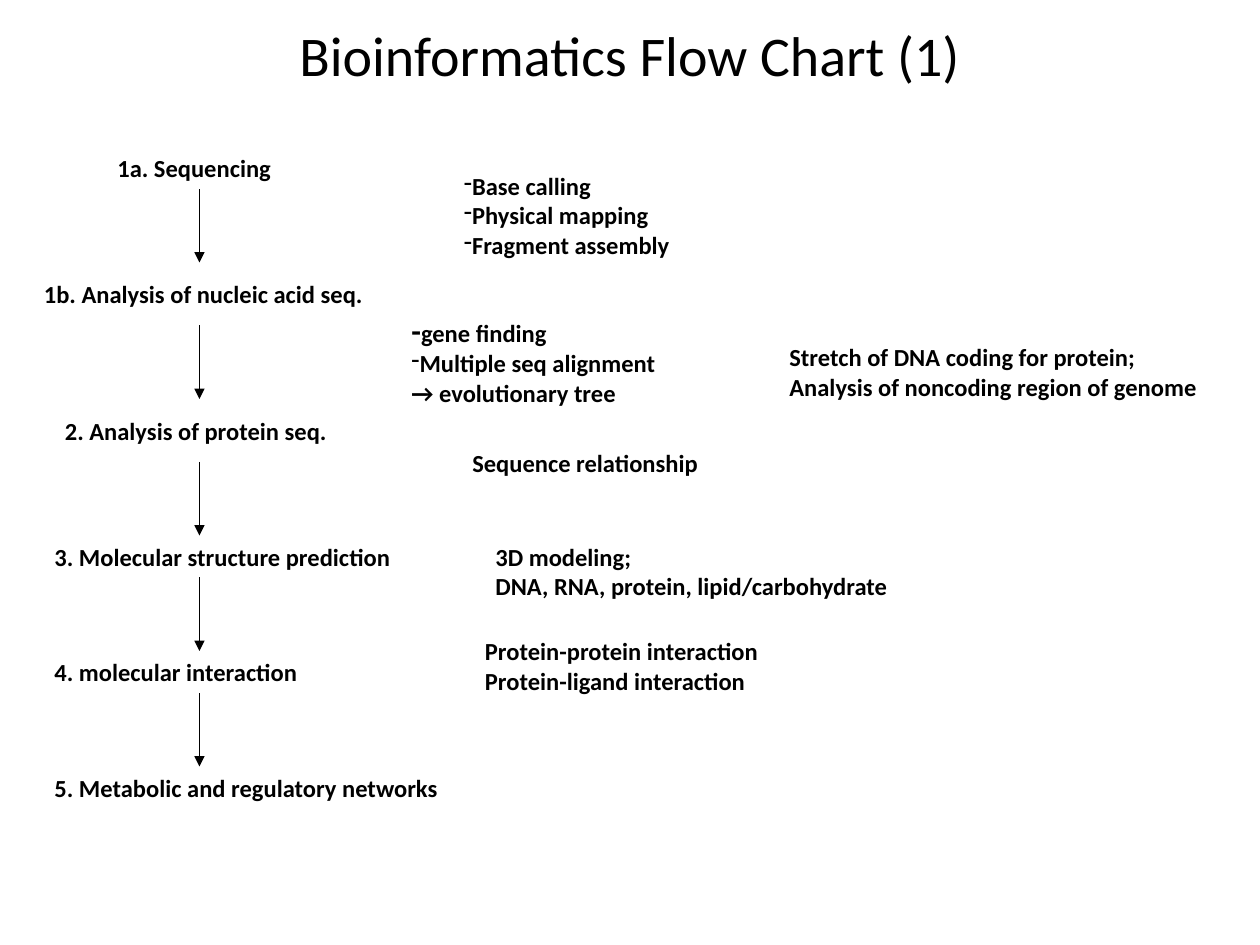
from dataclasses import dataclass

import pptx
import pptx.dml.color
import pptx.enum.shapes
import pptx.enum.text
import pptx.oxml
import pptx.oxml.ns
import pptx.util


@dataclass(frozen=True)
class Theme:
    font: str = "Calibri"
    ink: pptx.dml.color.RGBColor = pptx.dml.color.RGBColor(0, 0, 0)
    title: int = 32
    dash: int = 18
    body: int = 14
    line: float = 0.75


THEME = Theme()
TITLE = "Bioinformatics Flow Chart (1)"
COLUMNS, ROWS = 120, 90  # twelve grid cells to the inch
ARROW_COLUMN, ARROW_ROWS = 19, 7
LINE_ROWS, PADDING_ROWS = 2.85, 1.15

# label, column, row, width in columns, rows down to the arrow (0 = no arrow)
STEPS = [
    ("1a. Sequencing", 10, 14, 19.4, 4),
    ("1b. Analysis of nucleic acid seq.", 3, 26, 41.9, 5),
    ("2. Analysis of protein seq.", 5, 39, 31.2, 5),
    ("3. Molecular structure prediction", 4, 51, 38.4, 4),
    ("4. molecular interaction", 4, 62, 28.6, 4),
    ("5. Metabolic and regulatory networks", 4, 73, 43.3, 0),
]

# lines, column, row, width in columns; a line is text or a list of
# (text, size) runs, and "bulleted" holds the indexes of dashed lines
NOTES = [
    (["Base calling", "Physical mapping", "Fragment assembly"],
     43, 15.7, 25.1, {0, 1, 2}),
    ([[("-", THEME.dash), ("gene finding", THEME.body)],
      "Multiple seq alignment", "→ evolutionary tree"],
     38, 29, 28.2, {1}),
    (["Stretch of DNA coding for protein;",
      "Analysis of noncoding region of genome"], 74, 32, 46, set()),
    (["Sequence relationship"], 43.8, 42.1, 25.4, set()),
    (["3D modeling;", "DNA, RNA, protein, lipid/carbohydrate"],
     46, 51, 44.4, set()),
    (["Protein-protein interaction", "Protein-ligand interaction"],
     45, 60, 31.6, set()),
]

deck = pptx.Presentation()
deck.slide_width = pptx.util.Inches(10)
deck.slide_height = pptx.util.Inches(7.5)
slide = deck.slides.add_slide(deck.slide_layouts[5])


def x(columns):
    return round(deck.slide_width * columns / COLUMNS)


def y(rows):
    return round(deck.slide_height * rows / ROWS)


def write(frame, lines, size=THEME.body, bold=True, align=None, bulleted=()):
    for index, line in enumerate(lines):
        paragraph = frame.paragraphs[0] if index == 0 else frame.add_paragraph()
        paragraph.alignment = align
        if index in bulleted:
            properties = paragraph._p.get_or_add_pPr()
            for tag in ('buFontTx', 'buChar char="-"'):
                properties.append(pptx.oxml.parse_xml(
                    f'<a:{tag} {pptx.oxml.ns.nsdecls("a")}/>'))
        for text, points in [(line, size)] if isinstance(line, str) else line:
            run = paragraph.add_run()
            run.text = text
            run.font.name = THEME.font
            run.font.size = pptx.util.Pt(points)
            run.font.bold = bold
            run.font.color.rgb = THEME.ink


def add_label(lines, column, row, width, bulleted=()):
    height = PADDING_ROWS + LINE_ROWS * len(lines)
    frame = slide.shapes.add_textbox(x(column), y(row), x(width), y(height)).text_frame
    frame.word_wrap = True
    frame.auto_size = pptx.enum.text.MSO_AUTO_SIZE.SHAPE_TO_FIT_TEXT
    write(frame, lines, bulleted=bulleted)


def add_down_arrow(row):
    arrow = slide.shapes.add_connector(
        pptx.enum.shapes.MSO_CONNECTOR.STRAIGHT,
        x(ARROW_COLUMN), y(row), x(ARROW_COLUMN), y(row + ARROW_ROWS))
    arrow.line.color.rgb = THEME.ink
    arrow.line.width = pptx.util.Pt(THEME.line)
    namespace = pptx.oxml.ns.nsdecls("a")
    arrow.line._get_or_add_ln().append(
        pptx.oxml.parse_xml(f'<a:tailEnd {namespace} type="triangle"/>'))
    arrow._element.spPr.append(pptx.oxml.parse_xml(f"<a:effectLst {namespace}/>"))


title = slide.shapes.title
title.left, title.top, title.width, title.height = x(22.4), y(1.4), x(75.2), y(7.6)
title.text_frame.vertical_anchor = pptx.enum.text.MSO_ANCHOR.MIDDLE
write(title.text_frame, [TITLE], size=THEME.title, bold=False,
      align=pptx.enum.text.PP_ALIGN.CENTER)

for label, column, row, width, arrow_offset in STEPS:
    add_label([label], column, row, width)
    if arrow_offset:
        add_down_arrow(row + arrow_offset)

for note in NOTES:
    add_label(*note)

deck.save("out.pptx")
